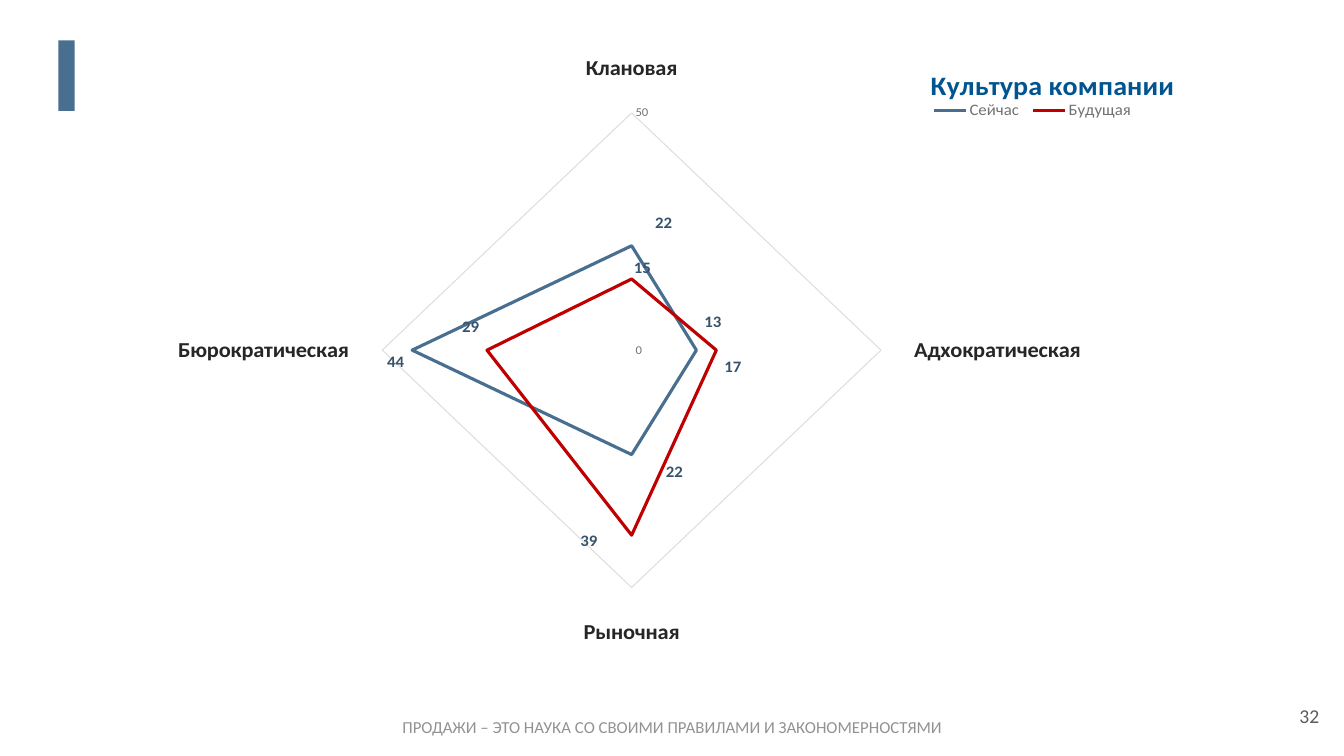
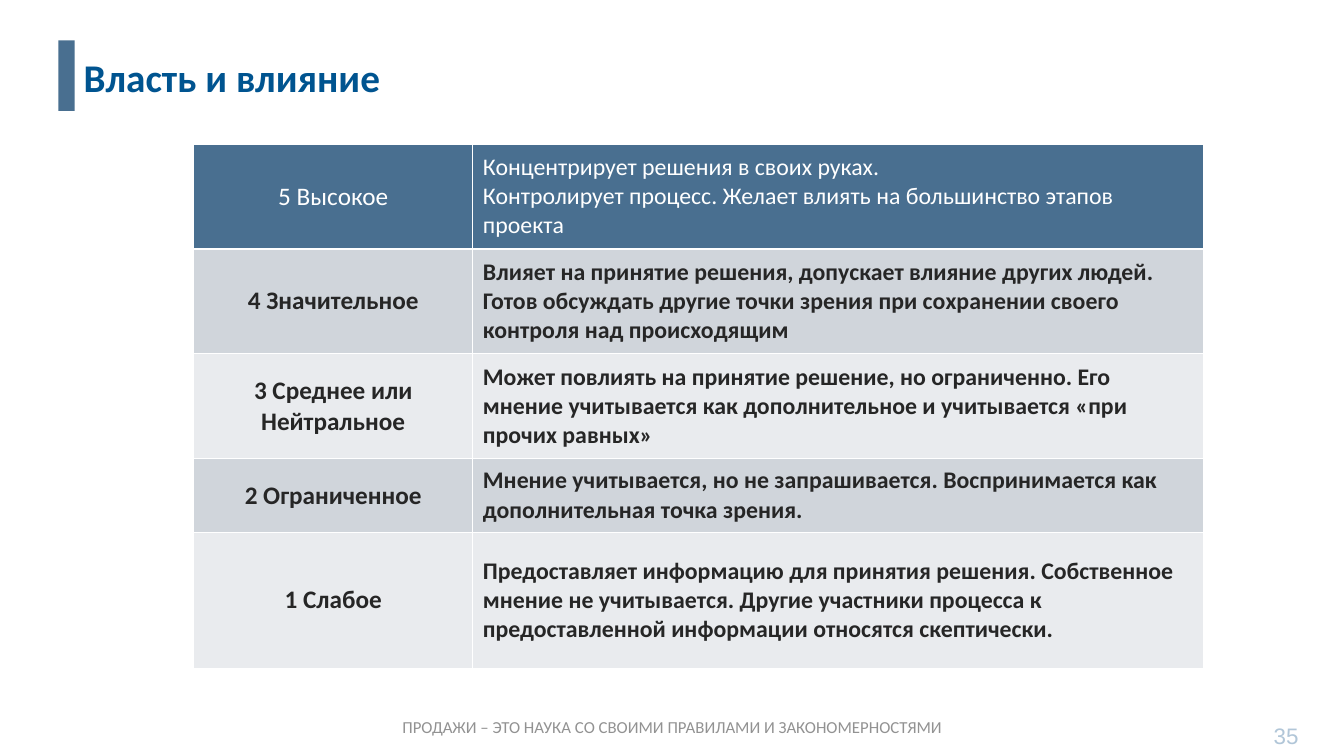
from lxml.etree import SubElement
from pptx import Presentation
from pptx.chart.data import CategoryChartData
from pptx.dml.color import RGBColor
from pptx.enum.chart import XL_CHART_TYPE as ChartType, XL_LEGEND_POSITION as LegendSide
from pptx.enum.chart import XL_TICK_MARK as TickMark
from pptx.enum.shapes import MSO_SHAPE as Preset
from pptx.enum.text import MSO_ANCHOR as Anchor, PP_ALIGN as Align
from pptx.oxml import parse_xml
from pptx.oxml.ns import nsdecls, qn
from pptx.util import Inches, Pt

COLORS = {
    "steel": "496F90", "title": "005490", "red": "C00000", "ink": "262626",
    "label": "37536C", "grid": "DEDEDE", "muted": "727272", "footer": "929292",
    "number": "5C5C5C", "pale number": "B1C6D8", "white": "FFFFFF",
    "dark band": "D0D5DB", "light band": "E9EBEE",
}
FOOTER = "ПРОДАЖИ – ЭТО НАУКА СО СВОИМИ ПРАВИЛАМИ И ЗАКОНОМЕРНОСТЯМИ"
CULTURES = ["Клановая", "Адхократическая", "Рыночная", "Бюрократическая"]
SERIES = [
    ("Сейчас", [22, 13, 22, 44], "steel",
     [(0.03, -0.01), (0, -0.05), (0.04, 0), (0, 0.02)]),
    ("Будущая", [15, 17, 39, 29], "red",
     [(0.01, 0.01), (0, 0.03), (-0.04, -0.02), (0, -0.04)]),
]
LEVELS = [
    ("5 Высокое", ["Концентрирует решения в своих руках.",
                   "Контролирует процесс. Желает влиять на большинство этапов проекта"], 1.04),
    ("4 Значительное", ["Влияет на принятие решения, допускает влияние других людей. Готов обсуждать "
                        "другие точки зрения при сохранении своего контроля над происходящим"], 1.04),
    ("3 Среднее или Нейтральное", ["Может повлиять на принятие решение, но ограниченно. Его мнение "
                                   "учитывается как дополнительное и учитывается «при прочих равных»"], 1.04),
    ("2 Ограниченное", ["Мнение учитывается, но не запрашивается. Воспринимается как "
                        "дополнительная точка зрения."], 0.73),
    ("1 Слабое", ["Предоставляет информацию для принятия решения. Собственное мнение не учитывается. "
                  "Другие участники процесса к предоставленной информации относятся скептически."], 1.35),
]


def color(name):
    """Return the named palette colour."""
    return RGBColor.from_string(COLORS[name])


def style(font, size, ink, bold=False, face="Calibri"):
    """Format a font."""
    font.size, font.bold, font.name = Pt(size), bold, face
    font.color.rgb = color(ink)


def write(frame, lines, size, ink, bold=False, align=Align.LEFT, face="Calibri"):
    """Write each line as a paragraph of one formatted run."""
    for index, line in enumerate(lines):
        para = frame.add_paragraph() if index else frame.paragraphs[0]
        para.alignment = align
        span = para.add_run()
        span.text = line
        style(span.font, size, ink, bold, face)


def add_text(page, box, text, size, ink, align=Align.LEFT, face="Calibri", anchor=Anchor.MIDDLE):
    """Add a one-line text box."""
    shape = page.shapes.add_textbox(*map(Inches, box))
    shape.text_frame.word_wrap = True
    shape.text_frame.vertical_anchor = anchor
    write(shape.text_frame, [text], size, ink, align=align, face=face)
    return shape


def furnish_layout(layout, page):
    """Give the layout its accent bar and footer, made on a page and moved."""
    bar = page.shapes.add_shape(Preset.RECTANGLE, *map(Inches, (0.58, 0.4, 0.16, 0.7)))
    bar.shadow.inherit = False
    bar.fill.solid()
    bar.fill.fore_color.rgb = color("steel")
    bar.line.fill.background()
    footer = add_text(page, (3.8, 7.06, 5.74, 0.3), FOOTER, 12, "footer", Align.CENTER, anchor=Anchor.TOP)
    footer.text_frame.word_wrap = False
    for shape in (bar, footer):
        layout.shapes.element.append(shape.element)


def set_layout(parent, index, **places):
    """Give a chart part a manual layout in fractions of the chart."""
    for old in parent.findall(qn("c:layout")):
        parent.remove(old)
    layout = parse_xml(f"<c:layout {nsdecls('c')}/>")
    manual = SubElement(layout, qn("c:manualLayout"))
    for key, value in places.items():
        SubElement(manual, qn(f"c:{key}")).set("val", str(value))
    parent.insert(index, layout)


def format_axes(chart):
    """Format the category names and the scale from 0 to 50."""
    names, scale = chart.category_axis, chart.value_axis
    names.has_major_gridlines = False
    style(names.tick_labels.font, 16, "ink", True)
    style(scale.tick_labels.font, 9, "muted")
    scale.tick_labels.number_format = "0"
    scale.tick_labels.number_format_is_linked = False
    scale.minimum_scale, scale.maximum_scale, scale.major_unit = 0, 50, 50
    scale.format.line.fill.background()
    for axis in (names, scale):
        axis.major_tick_mark = axis.minor_tick_mark = TickMark.NONE
    for line in (names.format.line, scale.major_gridlines.format.line):
        line.color.rgb = color("grid")
        line.width = Pt(0.75)


def format_series(chart):
    """Colour the outlines and place the value labels."""
    for series, (_, values, ink, _) in zip(chart.plots[0].series, SERIES):
        series.smooth = False
        series.format.line.color.rgb = color(ink)
        series.format.line.width = Pt(2.25)
        labels = series.data_labels
        labels.show_value = True
        labels.number_format, labels.number_format_is_linked = "0", False
        style(labels.font, 12, "label", True)
        for index in range(len(values)):
            style(series.points[index].data_label.font, 12, "label", True)
    offsets = [offset for *_, moves in SERIES for offset in moves]
    for label, (x, y) in zip(chart.element.iter(qn("c:dLbl")), offsets):
        set_layout(label, 1, x=x, y=y)
    for leader in chart.element.iter(qn("c:showLeaderLines")):
        leader.set("val", "0")


def add_culture_radar(page, box):
    """Add the radar chart with its title and legend at the upper right."""
    data = CategoryChartData(number_format="0")
    data.categories = CULTURES
    for name, values, *_ in SERIES:
        data.add_series(name, values)
    chart = page.shapes.add_chart(ChartType.RADAR, *map(Inches, box), data).chart
    style(chart.font, 10, "ink")
    chart.plots[0].vary_by_categories = False
    chart.has_title = chart.has_legend = True
    write(chart.chart_title.text_frame, ["Культура компании"], 20, "title", True)
    chart.legend.position = LegendSide.TOP
    chart.legend.include_in_layout = False
    style(chart.legend.font, 12, "muted")
    format_axes(chart)
    format_series(chart)
    edge = {"xMode": "edge", "yMode": "edge"}
    parts = [
        ("c:title", 1, {**edge, "x": 0.75, "y": 0.03}),
        ("c:legend", 1, {**edge, "x": 0.75, "y": 0.09, "w": 0.2, "h": 0.05}),
        ("c:plotArea", 0, {"layoutTarget": "inner", **edge, "x": 0.19, "y": 0.12, "w": 0.57, "h": 0.83}),
    ]
    for tag, index, places in parts:
        set_layout(next(chart.element.iter(qn(tag))), index, **places)


def add_title(page, box, text):
    """Move and fill the title placeholder."""
    title = page.shapes.title
    title.left, title.top, title.width, title.height = map(Inches, box)
    frame = title.text_frame
    frame.margin_left = frame.margin_right = frame.margin_top = frame.margin_bottom = 0
    frame.vertical_anchor = Anchor.TOP
    write(frame, [text], 28, "title", True)


def add_level_table(page, box):
    """Add the table of influence levels with a dark first row."""
    table = page.shapes.add_table(len(LEVELS), 2, *map(Inches, box)).table
    name_width = 2.77
    table.columns[0].width = Inches(name_width)
    table.columns[1].width = Inches(box[2] - name_width)
    for index, (level, lines, height) in enumerate(LEVELS):
        table.rows[index].height = Inches(height)
        fill = ("dark band" if index % 2 else "light band") if index else "steel"
        ink = "ink" if index else "white"
        name, details = table.rows[index].cells
        for cell in (name, details):
            cell.fill.solid()
            cell.fill.fore_color.rgb = color(fill)
            cell.vertical_anchor = Anchor.MIDDLE
        write(name.text_frame, [level], 18, ink, index > 0, Align.CENTER)
        write(details.text_frame, lines, 17, ink, index > 0)


def build_culture_page(page):
    """Build the company culture slide."""
    title = page.shapes.title.element
    title.getparent().remove(title)
    add_culture_radar(page, (1.23, 0.44, 10.6, 5.96))
    add_text(page, (12.79, 6.88, 0.44, 0.44), "32", 14, "number")


def build_influence_page(page):
    """Build the power and influence slide."""
    add_title(page, (0.83, 0.53, 8.57, 0.47), "Власть и влияние")
    add_level_table(page, (1.92, 1.43, 10.02, 5.2))
    add_text(page, (12.18, 7.1, 1.15, 0.4), "35", 16, "pale number", Align.CENTER, "Arial")


def main():
    """Build and save the deck."""
    deck = Presentation()
    deck.slide_width, deck.slide_height = Inches(13.33), Inches(7.5)
    layout = deck.slide_layouts[5]
    culture, influence = [deck.slides.add_slide(layout) for _ in range(2)]
    furnish_layout(layout, culture)
    build_culture_page(culture)
    build_influence_page(influence)
    deck.save("out.pptx")


if __name__ == "__main__":
    main()
